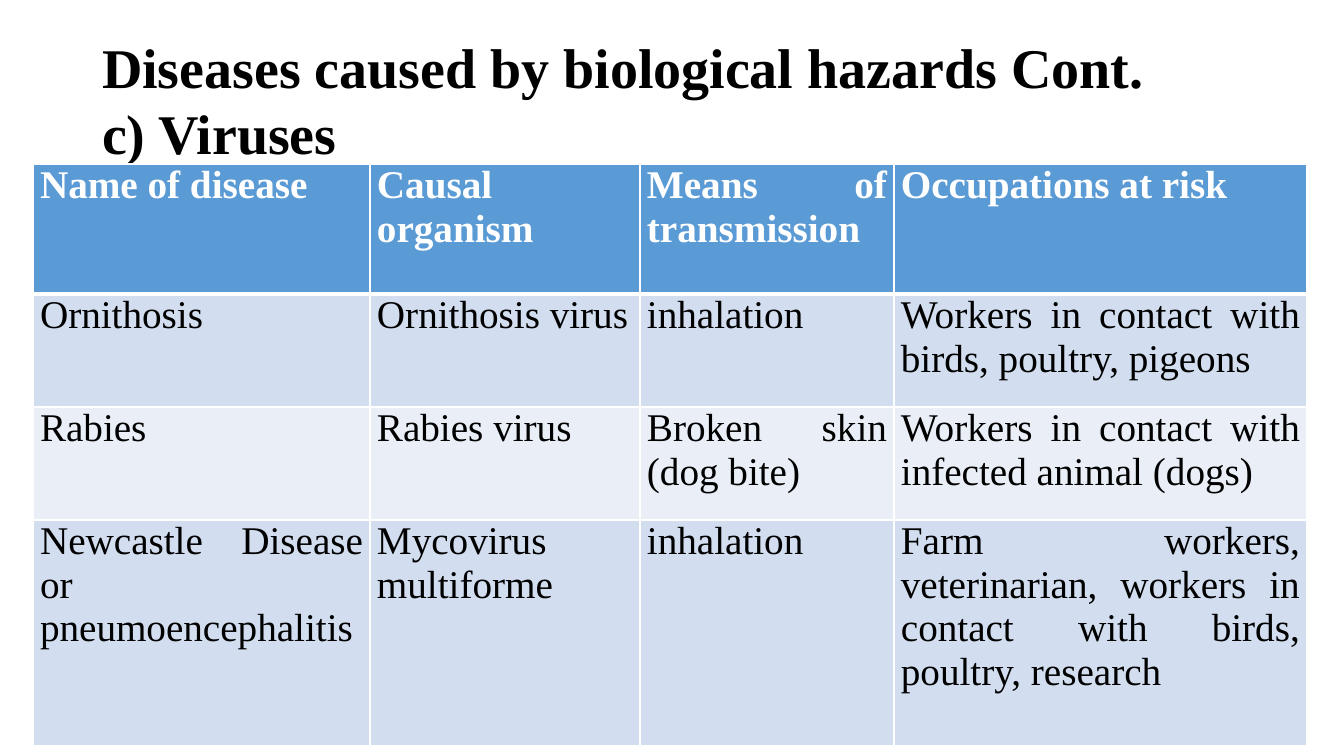
from dataclasses import dataclass

import lxml.etree
import pptx
import pptx.dml.color
import pptx.enum.text
import pptx.oxml.ns
import pptx.util

RGB = pptx.dml.color.RGBColor
BLACK = RGB(0x00, 0x00, 0x00)
WHITE = RGB(0xFF, 0xFF, 0xFF)
HEADER_BLUE = RGB(0x5B, 0x9B, 0xD5)
BANDS = (RGB(0xD2, 0xDE, 0xEF), RGB(0xEA, 0xEF, 0xF7))
FONT = "Times New Roman"
EMU_PER_PX = 914400 / 100.8


def px(n: int) -> pptx.util.Emu:
    return pptx.util.Emu(round(n * EMU_PER_PX))


@dataclass
class Row:
    height: int
    texts: tuple[str, ...]


COL_WIDTHS = (337, 270, 254, 413)
ROWS = (
    Row(130, ("Name of disease", "Causal organism", "Means of transmission",
              "Occupations at risk")),
    Row(113, ("Ornithosis", "Ornithosis virus", "inhalation",
              "Workers in contact with birds, poultry, pigeons")),
    Row(113, ("Rabies", "Rabies virus", "Broken skin (dog bite)",
              "Workers in contact with infected animal (dogs)")),
    Row(226, ("Newcastle Disease or pneumoencephalitis", "Mycovirus multiforme",
              "inhalation",
              "Farm workers, veterinarian, workers in contact with birds, "
              "poultry, research")),
)
TITLE_LINES = ("Diseases caused by biological hazards Cont.", "c) Viruses")


def add_run(p, text: str, size: float, color: RGB, bold: bool) -> None:
    r = p.add_run()
    r.text = text
    r.font.name = FONT
    r.font.size = pptx.util.Pt(size)
    r.font.bold = bold
    r.font.color.rgb = color


def set_borders(cell, top: int, bottom: int) -> None:
    """Draw white borders; top and bottom widths are in points."""
    qn = pptx.oxml.ns.qn
    tc_pr = cell._tc.get_or_add_tcPr()
    sides = (("a:lnL", 1), ("a:lnR", 1), ("a:lnT", top), ("a:lnB", bottom))
    for i, (tag, width) in enumerate(sides):
        ln = lxml.etree.Element(qn(tag), w=str(pptx.util.Pt(width)))
        fill = lxml.etree.SubElement(ln, qn("a:solidFill"))
        lxml.etree.SubElement(fill, qn("a:srgbClr"), val=str(WHITE))
        tc_pr.insert(i, ln)


def fill_cell(cell, text: str, row: int) -> None:
    header = row == 0
    cell.fill.solid()
    cell.fill.fore_color.rgb = HEADER_BLUE if header else BANDS[(row - 1) % 2]
    cell.margin_left = cell.margin_right = px(7)
    cell.margin_top = cell.margin_bottom = 0
    p = cell.text_frame.paragraphs[0]
    p.alignment = pptx.enum.text.PP_ALIGN.JUSTIFY
    add_run(p, text, 28, WHITE if header else BLACK, header)
    set_borders(cell, 3 if row == 1 else 1, 3 if header else 1)


def add_title(s) -> None:
    sp = s.shapes.title
    sp.left, sp.top, sp.width, sp.height = px(92), px(40), px(1159), px(124)
    tf = sp.text_frame
    tf.word_wrap = True
    tf.auto_size = pptx.enum.text.MSO_AUTO_SIZE.NONE
    tf.vertical_anchor = pptx.enum.text.MSO_ANCHOR.MIDDLE
    tf.margin_top = tf.margin_bottom = 0
    p = tf.paragraphs[0]
    p.alignment = pptx.enum.text.PP_ALIGN.LEFT
    p.line_spacing = 0.97
    for i, line in enumerate(TITLE_LINES):
        if i:
            p.add_line_break()
        add_run(p, line, 40, BLACK, True)


def add_disease_table(s) -> None:
    height = sum(row.height for row in ROWS)
    table = s.shapes.add_table(len(ROWS), len(COL_WIDTHS), px(33), px(164),
                               px(sum(COL_WIDTHS)), px(height)).table
    for col, width in zip(table.columns, COL_WIDTHS):
        col.width = px(width)
    for i, row in enumerate(ROWS):
        table.rows[i].height = px(row.height)
        for j, text in enumerate(row.texts):
            fill_cell(table.cell(i, j), text, i)


def main() -> None:
    prs = pptx.Presentation()
    prs.slide_width, prs.slide_height = px(1344), px(756)
    s = prs.slides.add_slide(prs.slide_layouts[5])  # title only
    add_title(s)
    add_disease_table(s)
    prs.save("out.pptx")


if __name__ == "__main__":
    main()
